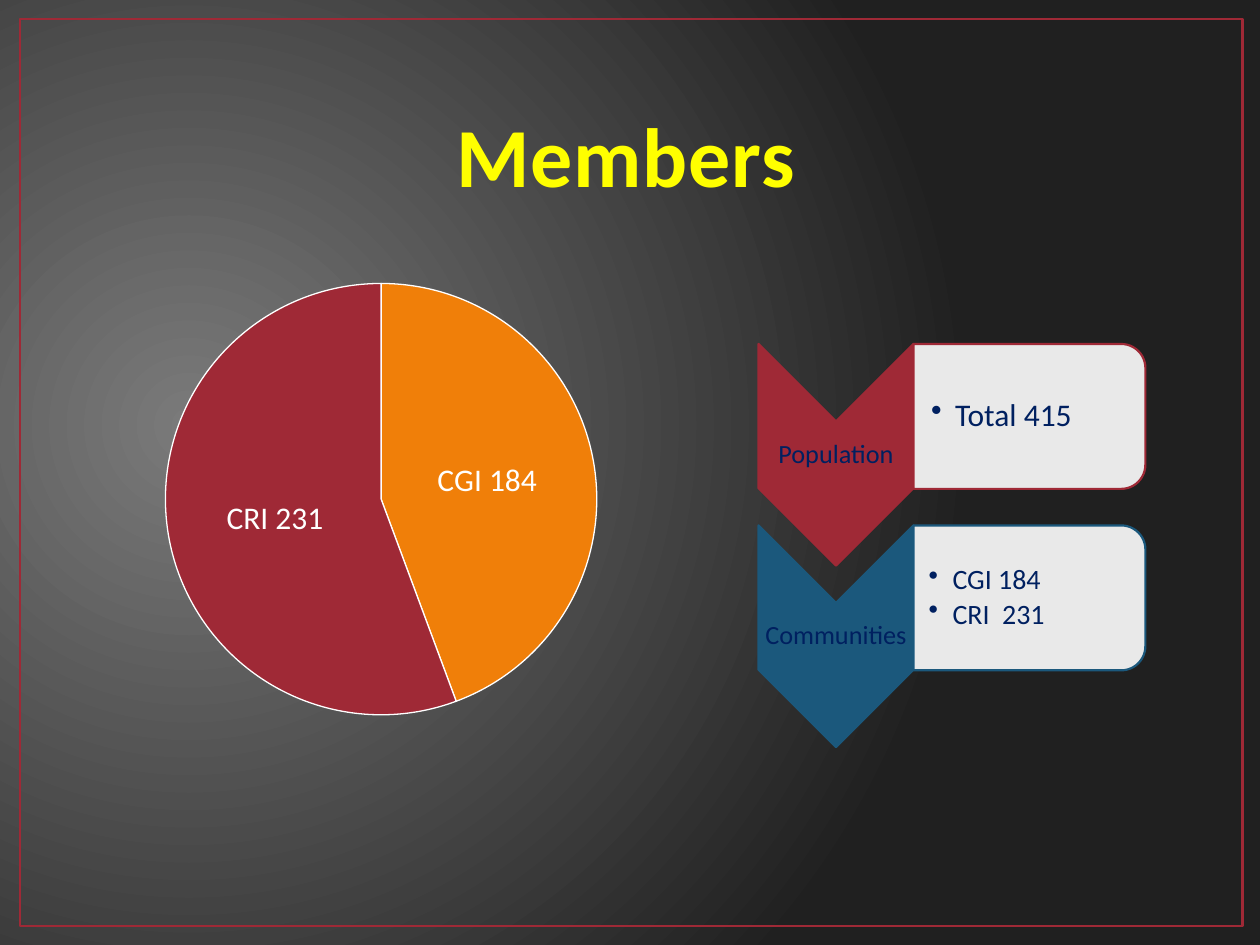
from lxml import etree
from pptx import Presentation
from pptx.chart.data import CategoryChartData
from pptx.dml.color import RGBColor
from pptx.enum.chart import XL_CHART_TYPE as ChartType, XL_LABEL_POSITION as LabelPosition
from pptx.enum.shapes import MSO_SHAPE as Shape
from pptx.enum.text import MSO_ANCHOR as Anchor, PP_ALIGN as Align
from pptx.oxml import parse_xml
from pptx.oxml.ns import nsdecls, qn
from pptx.util import Inches, Pt

COLORS = {
    "glow": "7A7A7A", "dark": "202020", "red": "9F2936", "blue": "1B587C",
    "orange": "F07F09", "white": "FFFFFF", "navy": "002060",
    "yellow": "FFFF00", "brown": "784004",
}
FONT = "Calibri"
LEFT, SPLIT, RIGHT = 6.02, 7.25, 9.09  # columns of the chevron list
TOP, PITCH = 2.73, 1.44
CHEVRON_HEIGHT, CARD_HEIGHT = 1.76, 1.15
ROWS = [
    ("Population", ["Total 415"], 18, 0.14, "red"),
    ("Communities", ["CGI 184", "CRI  231"], 16, 0.12, "blue"),
]


def rgb(name):
    return RGBColor.from_string(COLORS[name])


def style_font(font, size, color, bold=False):
    font.name, font.size, font.bold = FONT, Pt(size), bold
    font.color.rgb = rgb(color)


def set_background(page):
    """Radial glow centred left of the middle."""
    page.background.fill.gradient()
    old = page.element.find(".//" + qn("a:gradFill"))
    glow = parse_xml(
        f'<a:gradFill {nsdecls("a")} rotWithShape="1"><a:gsLst>'
        f'<a:gs pos="0"><a:srgbClr val="{COLORS["glow"]}"/></a:gs>'
        f'<a:gs pos="100000"><a:srgbClr val="{COLORS["dark"]}"/></a:gs></a:gsLst>'
        '<a:path path="circle"><a:fillToRect l="15000" t="50000" r="85000" b="60000"/>'
        '</a:path></a:gradFill>')
    old.getparent().replace(old, glow)


def add_outline(page, preset, left, top, width, height, color, weight):
    box = page.shapes.add_shape(
        preset, Inches(left), Inches(top), Inches(width), Inches(height))
    box.shadow.inherit = False
    box.fill.background()
    box.line.color.rgb = rgb(color)
    box.line.width = Pt(weight)
    return box


def add_turned(page, preset, left, top, width, height, fill, line):
    """Shape turned a quarter; left, top, width and height are as seen."""
    shift = (width - height) / 2
    box = add_outline(page, preset, left + shift, top - shift, height, width, line, 1.25)
    box.rotation = 90
    box.fill.solid()
    box.fill.fore_color.rgb = rgb(fill)
    return box


def add_label(page, left, top, width, height, lines, size, inset=0.01, bulleted=False):
    box = page.shapes.add_textbox(Inches(left), Inches(top), Inches(width), Inches(height))
    frame = box.text_frame
    frame.word_wrap = True
    frame.vertical_anchor = Anchor.MIDDLE
    frame.margin_top = frame.margin_right = frame.margin_bottom = Inches(0.01)
    frame.margin_left = Inches(inset)
    frame.text = "\n".join(lines)
    for para in frame.paragraphs:
        para.line_spacing = 0.9
        para.space_after = Pt(size * (0.15 if bulleted else 0.35))
        para.alignment = Align.LEFT if bulleted else Align.CENTER
        style_font(para.runs[0].font, size, "navy")
        if bulleted:
            layout = para._p.get_or_add_pPr()
            layout.set("marL", str(Inches(0.19)))
            layout.set("indent", str(Inches(-0.19)))
            etree.SubElement(layout, qn("a:buChar")).set("char", "•")


def add_row(page, top, label, facts, size, inset, color):
    chevron_width, card_width = SPLIT - LEFT, RIGHT - SPLIT
    add_turned(page, Shape.CHEVRON, LEFT, top, chevron_width, CHEVRON_HEIGHT, color, color)
    add_label(page, LEFT, top + chevron_width / 2, chevron_width, 0.53, [label], 15)
    card = add_turned(page, Shape.ROUND_2_SAME_RECTANGLE, SPLIT, top,
                      card_width, CARD_HEIGHT, "white", color)
    tint = card.element.spPr.find(qn("a:solidFill"))[0]
    etree.SubElement(tint, qn("a:alpha")).set("val", "90000")
    add_label(page, SPLIT, top + 0.06, card_width - 0.05, CARD_HEIGHT - 0.12,
              facts, size, inset, bulleted=True)


def add_title(page):
    title = page.shapes.title
    title.left, title.top = Inches(0.75), Inches(0.84)
    title.width, title.height = Inches(8.43), Inches(0.83)
    frame = title.text_frame
    frame.text = "Members"
    frame.vertical_anchor = Anchor.BOTTOM
    para = frame.paragraphs[0]
    para.alignment = Align.CENTER
    span = para.runs[0]
    style_font(span.font, 48, "yellow", bold=True)
    props = span._r.get_or_add_rPr()
    props.set("spc", "50")
    props.insert(0, parse_xml(
        f'<a:ln {nsdecls("a")} w="{Pt(1.05)}"><a:solidFill>'
        f'<a:srgbClr val="{COLORS["brown"]}"/></a:solidFill></a:ln>'))


def add_pie(page):
    data = CategoryChartData()
    data.categories = ["CGI", "CRI"]
    data.add_series("Series 1", [184, 231])
    chart = page.shapes.add_chart(
        ChartType.PIE, Inches(0.35), Inches(1.7), Inches(5.35), Inches(4.57), data).chart
    chart.has_title = chart.has_legend = False
    style_font(chart.font, 18, "white")
    plot = chart.plots[0]
    plot.vary_by_categories = True
    for index, color in enumerate(["orange", "red"]):
        slice_format = plot.series[0].points[index].format
        slice_format.fill.solid()
        slice_format.fill.fore_color.rgb = rgb(color)
        slice_format.line.color.rgb = rgb("white")
        slice_format.line.width = Pt(0.75)
    plot.has_data_labels = True
    labels = plot.data_labels
    labels.show_category_name = labels.show_value = True
    labels.show_percentage = False
    labels.position = LabelPosition.CENTER
    style_font(labels.font, 18, "white")
    chart_xml = chart.element
    separator = etree.Element(qn("c:separator"))
    separator.text = " "
    chart_xml.find(".//" + qn("c:dLbls") + "/" + qn("c:showPercent")).addnext(separator)
    bubble = separator.getparent().find(qn("c:showBubbleSize"))
    if bubble is not None:
        bubble.addnext(separator)
    area = chart_xml.find(".//" + qn("c:plotArea"))
    for old in area.findall(qn("c:layout")):
        area.remove(old)
    area.insert(0, parse_xml(
        f'<c:layout {nsdecls("c")}><c:manualLayout><c:layoutTarget val="inner"/>'
        '<c:xMode val="edge"/><c:yMode val="edge"/><c:x val="0.18"/><c:y val="0.12"/>'
        '<c:w val="0.64"/><c:h val="0.75"/></c:manualLayout></c:layout>'))


def main():
    deck = Presentation()
    deck.slide_width, deck.slide_height = Inches(10), Inches(7.5)
    page = deck.slides.add_slide(deck.slide_layouts[5])
    set_background(page)
    add_outline(page, Shape.RECTANGLE, 0.16, 0.15, 9.7, 7.2, "red", 1.5)
    for index, row in enumerate(ROWS):
        add_row(page, TOP + index * PITCH, *row)
    add_title(page)
    add_pie(page)
    deck.save("out.pptx")


if __name__ == "__main__":
    main()
